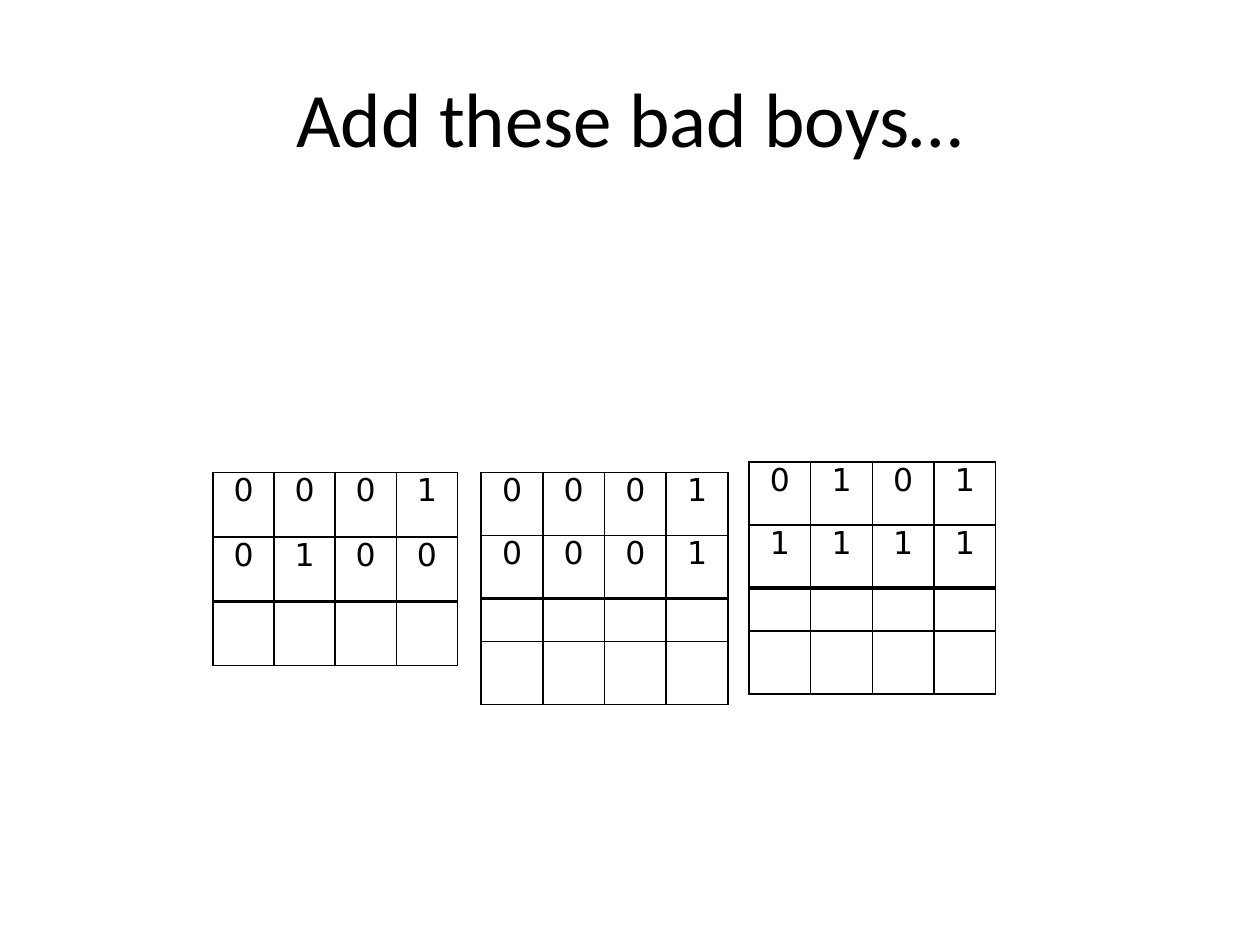
import pptx
import pptx.dml.color
import pptx.enum.text
import pptx.util
import lxml.etree

Pt = pptx.util.Pt
INK = "000000"
NS = "http://schemas.openxmlformats.org/drawingml/2006/main"


def style(para, face, size, ink):
    para.alignment = pptx.enum.text.PP_ALIGN.CENTER
    para.font.name = face
    para.font.size = Pt(size)
    para.font.color.rgb = pptx.dml.color.RGBColor.from_string(ink)


def edge(cell, side, width, ink):
    """Draw one border of a cell; side is L, R, T or B."""
    props = cell._tc.get_or_add_tcPr()
    line = lxml.etree.SubElement(props, f"{{{NS}}}ln{side}", w=str(Pt(width)))
    fill = lxml.etree.SubElement(line, f"{{{NS}}}solidFill")
    lxml.etree.SubElement(fill, f"{{{NS}}}srgbClr", val=ink)


deck = pptx.Presentation()
deck.slide_width, deck.slide_height = Pt(720), Pt(540)
slide = deck.slides.add_slide(deck.slide_layouts[6])

title = slide.shapes.add_textbox(Pt(36), Pt(21.6), Pt(648), Pt(90))
frame = title.text_frame
frame.word_wrap = True
frame.vertical_anchor = pptx.enum.text.MSO_ANCHOR.MIDDLE
frame.text = "Add these bad boys…"
style(frame.paragraphs[0], "Calibri", 44, INK)

# Left, top, column width, row heights, and the two numbers to add
sums = [
    (121.75, 270, 34.9, [36.8, 36.8, 36.8], ["0001", "0100"]),
    (275, 270, 35.25, [36, 36, 24.5, 36], ["0001", "0001"]),
    (428, 264, 35.25, [36, 36, 24.5, 36], ["0101", "1111"]),
]

for left, top, width, rows, terms in sums:
    grid = slide.shapes.add_table(
        len(rows), 4, Pt(left), Pt(top), Pt(4 * width), Pt(sum(rows))
    ).table
    grid.first_row = grid.horz_banding = False
    for col in grid.columns:
        col.width = Pt(width)
    for r, height in enumerate(rows):
        grid.rows[r].height = Pt(height)
        for c in range(4):
            cell = grid.cell(r, c)
            cell.margin_left = cell.margin_right = 0
            cell.margin_top = cell.margin_bottom = 0
            # The heavy rule runs below the second number
            edge(cell, "L", 1, INK)
            edge(cell, "R", 1, INK)
            edge(cell, "T", 2.25 if r == 2 else 1, INK)
            edge(cell, "B", 2.25 if r == 1 else 1, INK)
            cell.fill.background()
            if r < len(terms):
                cell.text = terms[r][c]
                style(cell.text_frame.paragraphs[0], "DejaVu Sans", 18, INK)

deck.save("out.pptx")
